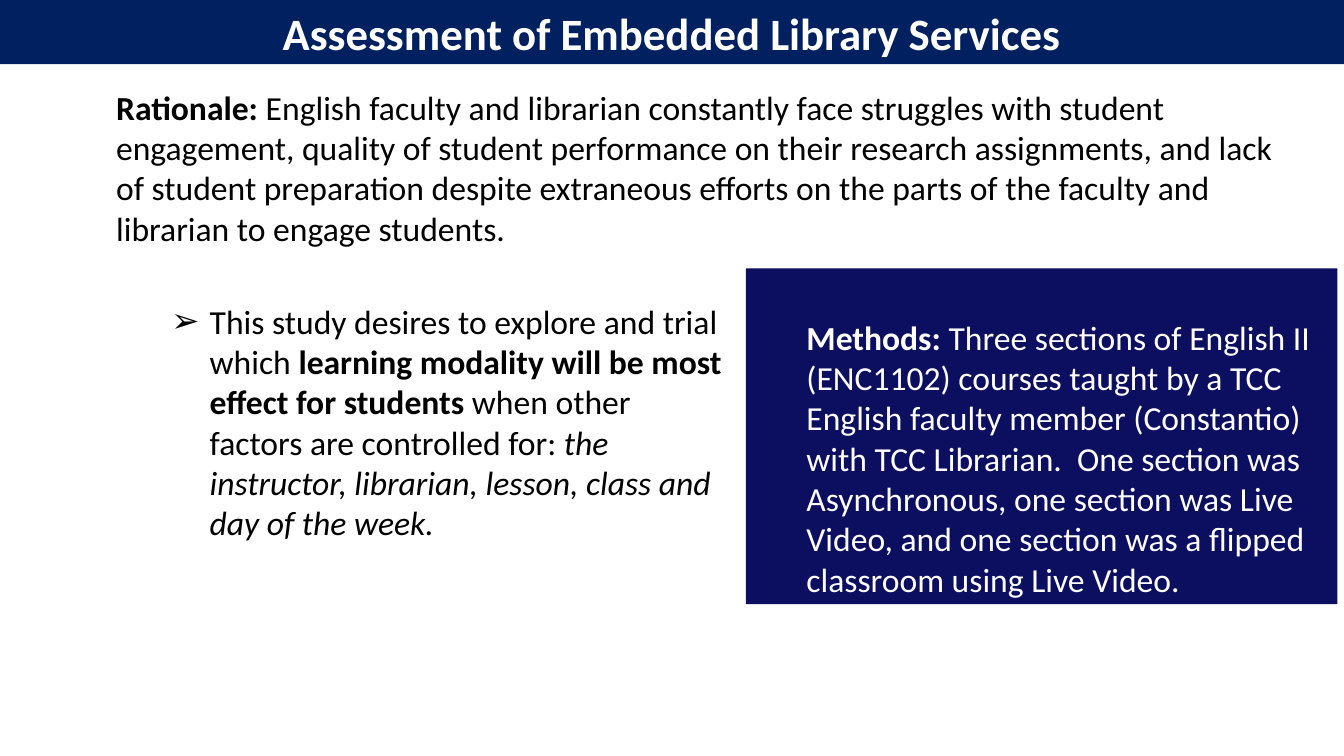
"""Build the slide on assessing embedded library services."""
from lxml.etree import SubElement
from pptx import Presentation
from pptx.dml.color import RGBColor
from pptx.enum.text import MSO_ANCHOR as ANCHOR, MSO_AUTO_SIZE as AUTO, PP_ALIGN as ALIGN
from pptx.oxml.ns import qn
from pptx.util import Inches, Pt

WIDTH, HEIGHT = 13.33, 7.5
FONT = "Calibri"
BLACK, WHITE, NAVY, INDIGO = "000000", "FFFFFF", "002060", "0C0E60"

RATIONALE = [
    ("Rationale: ", {"bold": True}),
    ("English faculty and librarian constantly face struggles with student engagement, "
     "quality of student performance on their research assignments, and lack of student "
     "preparation despite extraneous efforts on the parts of the faculty and librarian "
     "to engage students.", {}),
]
STUDY = [
    ("This study desires to explore and trial which ", {}),
    ("learning modality will be most effect for students ", {"bold": True}),
    ("when other factors are controlled for: ", {}),
    ("the instructor, librarian, lesson, class and day of the week.", {"italic": True}),
]
METHODS = [
    ("Methods: ", {"bold": True}),
    ("Three sections of English II (ENC1102) courses taught by a TCC English faculty "
     "member (Constantio) with TCC Librarian.  One section was Asynchronous, one section "
     "was Live Video, and one section was a flipped classroom using Live Video.", {}),
]


def rgb(value):
    return RGBColor.from_string(value)


def place(sp, left, top, width, height):
    """Position a shape by shares of the slide's width and height."""
    sp.left, sp.width = (Inches(WIDTH * share) for share in (left, width))
    sp.top, sp.height = (Inches(HEIGHT * share) for share in (top, height))


def fill(sp, color):
    sp.fill.solid()
    sp.fill.fore_color.rgb = rgb(color)


def set_bullet(p, margin=0, char=None):
    pPr = p._p.get_or_add_pPr()
    pPr.set("marL", str(Inches(margin)))
    pPr.set("indent", str(-Inches(margin) if char else 0))
    if char:
        SubElement(pPr, qn("a:buFont"), typeface="Arial")
        SubElement(pPr, qn("a:buChar"), char=char)
    else:
        SubElement(pPr, qn("a:buNone"))


def write(sp, runs, color=BLACK, size=24, align=ALIGN.LEFT, anchor=ANCHOR.TOP,
          margin=0, char=None):
    """Write one paragraph of formatted runs into a shape."""
    tf = sp.text_frame
    frame = {"word_wrap": True, "auto_size": AUTO.NONE, "vertical_anchor": anchor}
    for name, value in frame.items():
        setattr(tf, name, value)
    p = tf.paragraphs[0]
    set_bullet(p, margin, char)
    p.alignment, p.space_before = align, Pt(0)
    for text, style in runs:
        r = p.add_run()
        r.text = text
        font = {"name": FONT, "size": Pt(size), "bold": False, "italic": False} | style
        for name, value in font.items():
            setattr(r.font, name, value)
        r.font.color.rgb = rgb(color)


def main():
    prs = Presentation()
    prs.slide_width, prs.slide_height = Inches(WIDTH), Inches(HEIGHT)
    s = prs.slides.add_slide(prs.slide_layouts.get_by_name("Two Content"))
    title, study, methods = s.placeholders
    rationale = s.shapes.add_textbox(0, 0, 0, 0)

    place(title, 0, 0, 1, 0.085)
    place(rationale, 0.079, 0.108, 0.885, 0.283)
    place(study, 0.12, 0.391, 0.427, 0.336)
    place(methods, 0.555, 0.355, 0.44, 0.444)
    fill(title, NAVY)
    fill(methods, INDIGO)

    write(title, [("Assessment of Embedded Library Services", {"bold": True})],
          WHITE, 32, ALIGN.CENTER, ANCHOR.MIDDLE)
    write(rationale, RATIONALE)
    write(study, STUDY, margin=0.38, char="➢")
    write(methods, METHODS, WHITE, anchor=ANCHOR.BOTTOM, margin=0.5)
    prs.save("out.pptx")


if __name__ == "__main__":
    main()
